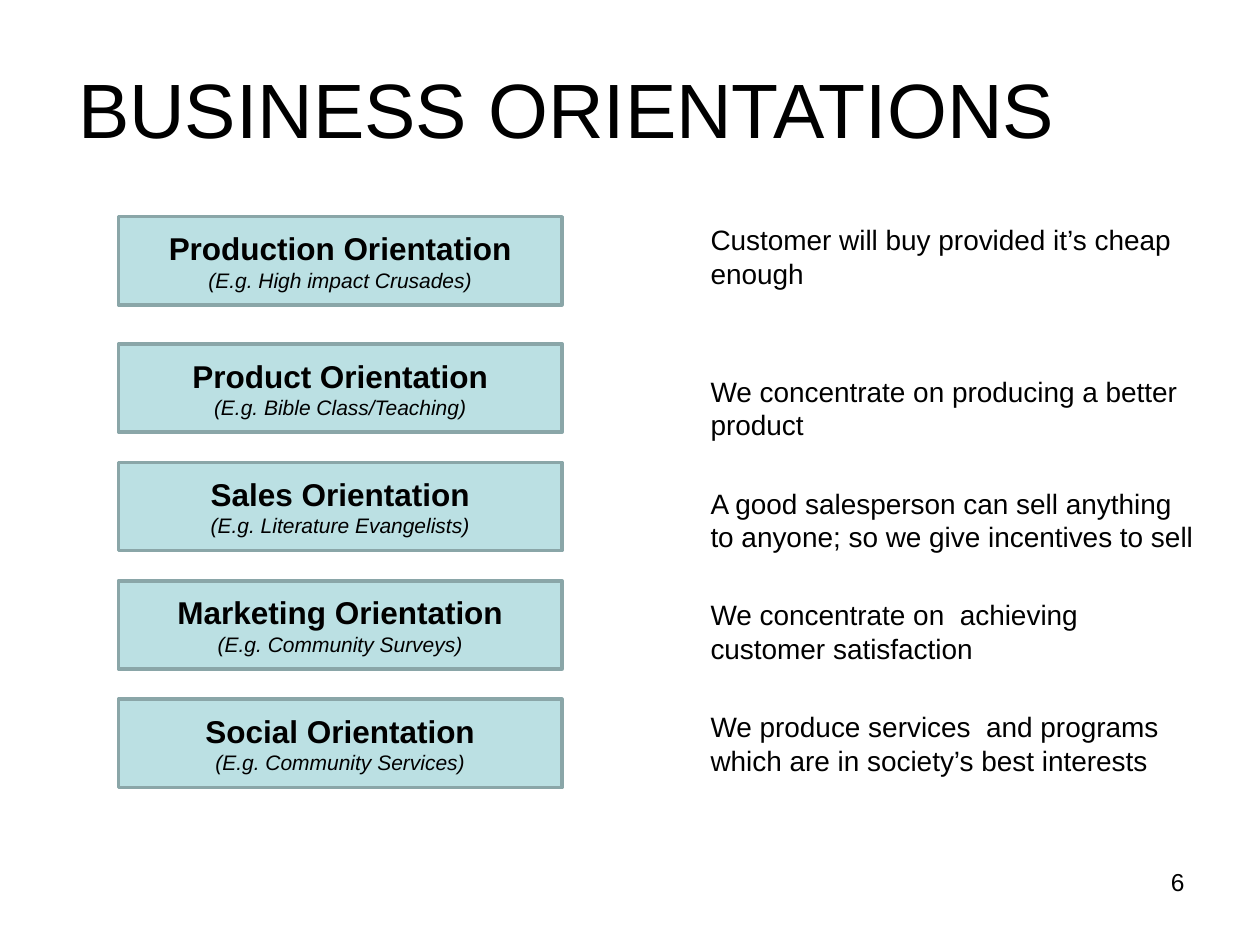
from pptx import Presentation
from pptx.dml.color import RGBColor
from pptx.enum.shapes import MSO_SHAPE
from pptx.enum.text import MSO_ANCHOR, PP_ALIGN
from pptx.util import Pt

# Content
TITLE = "BUSINESS ORIENTATIONS"
PAGE_NUMBER = "6"
ORIENTATIONS = [
    ("Production Orientation", "(E.g. High impact Crusades)",
     "Customer will buy provided it’s cheap enough"),
    ("Product Orientation", "(E.g. Bible Class/Teaching)",
     "We concentrate on producing a better product"),
    ("Sales Orientation", "(E.g. Literature Evangelists)",
     "A good salesperson can sell anything to anyone; so we give incentives to sell"),
    ("Marketing Orientation", "(E.g. Community Surveys)",
     "We concentrate on  achieving customer satisfaction"),
    ("Social Orientation", "(E.g. Community Services)",
     "We produce services  and programs which are in society’s best interests"),
]

THEME = {
    "font": "Arial",
    "text": RGBColor(0x00, 0x00, 0x00),
    "fill": RGBColor(0xBB, 0xE0, 0xE3),
    "line": RGBColor(0x8A, 0xA6, 0xA8),
    "title": 44, "name": 18, "body": 16, "number": 14, "example": 12,
}

# Layout, in points
BOX_LEFT, BOX_WIDTH, BOX_HEIGHT = 67.68, 253.44, 50.4
FIRST_TOP, SECOND_TOP, BOX_PITCH = 123.84, 196.56, 67.68
LINE_HEIGHT = 19.2
FIRST_GAP, GAP = 48, 25.6


def add_run(paragraph, text, size, bold=False, italic=False):
    run = paragraph.add_run()
    run.text = text
    run.font.name = THEME["font"]
    run.font.size = Pt(THEME[size])
    run.font.color.rgb = THEME["text"]
    run.font.bold = bold
    run.font.italic = italic


def add_text_frame(slide, left, top, width, height):
    box = slide.shapes.add_textbox(Pt(left), Pt(top), Pt(width), Pt(height))
    box.text_frame.word_wrap = True
    return box.text_frame


def add_orientation_box(slide, top, name, example):
    shape = slide.shapes.add_shape(
        MSO_SHAPE.RECTANGLE, Pt(BOX_LEFT), Pt(top), Pt(BOX_WIDTH), Pt(BOX_HEIGHT))
    shape.shadow.inherit = False
    shape.fill.solid()
    shape.fill.fore_color.rgb = THEME["fill"]
    shape.line.color.rgb = THEME["line"]
    shape.line.width = Pt(2)
    frame = shape.text_frame
    frame.vertical_anchor = MSO_ANCHOR.MIDDLE
    add_run(frame.paragraphs[0], name, "name", bold=True)
    add_run(frame.add_paragraph(), example, "example", italic=True)
    for paragraph in frame.paragraphs:
        paragraph.alignment = PP_ALIGN.CENTER


def main():
    presentation = Presentation()
    presentation.slide_width, presentation.slide_height = Pt(720), Pt(540)
    slide = presentation.slides.add_slide(presentation.slide_layouts[6])

    # Title
    title = add_text_frame(slide, 0, 16.56, 648, 90)
    title.vertical_anchor = MSO_ANCHOR.MIDDLE
    title.paragraphs[0].alignment = PP_ALIGN.CENTER
    add_run(title.paragraphs[0], TITLE, "title")

    # Descriptions on the right, orientation boxes on the left
    descriptions = add_text_frame(slide, 371.52, FIRST_TOP, 318.24, 356.4)
    descriptions.margin_left = Pt(34.5)
    for index, (name, example, description) in enumerate(ORIENTATIONS):
        if index == 0:
            top = FIRST_TOP
            paragraph = descriptions.paragraphs[0]
        else:
            top = SECOND_TOP + (index - 1) * BOX_PITCH
            paragraph = descriptions.add_paragraph()
            paragraph.space_before = Pt(FIRST_GAP if index == 1 else GAP)
        paragraph.line_spacing = Pt(LINE_HEIGHT)
        add_run(paragraph, description, "body")
        add_orientation_box(slide, top, name, example)

    # Page number
    number = add_text_frame(slide, 516.24, 491.76, 167.76, 37.44)
    number.paragraphs[0].alignment = PP_ALIGN.RIGHT
    add_run(number.paragraphs[0], PAGE_NUMBER, "number")

    presentation.save("out.pptx")


if __name__ == "__main__":
    main()
